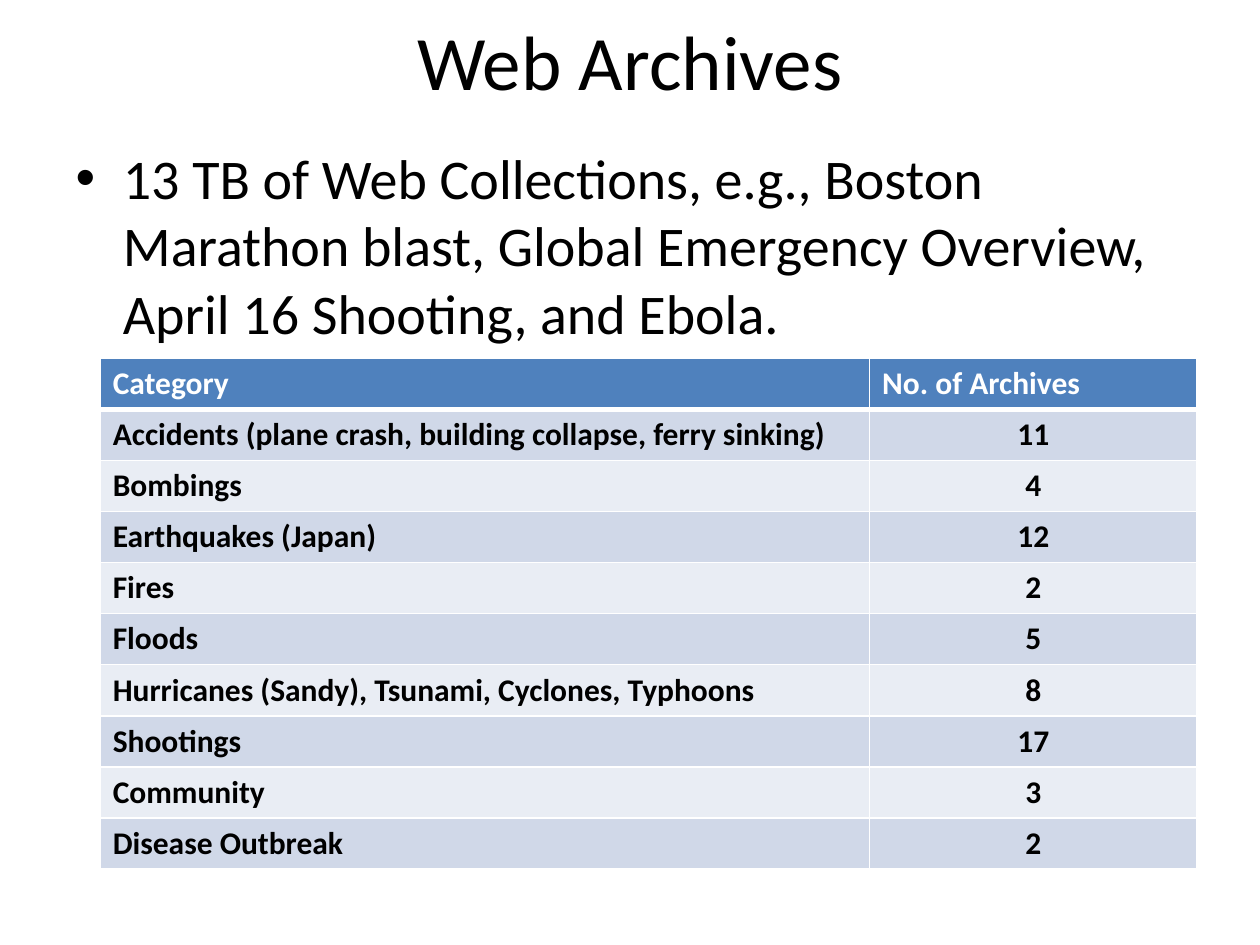
import pptx
import pptx.util
import pptx.dml.color
import pptx.enum.text
import pptx.oxml
import pptx.oxml.ns
from pptx.util import Cm

TITLE = "Web Archives"
BULLET = (
    "13 TB of Web Collections, e.g., Boston Marathon blast, "
    "Global Emergency Overview, April 16 Shooting, and Ebola."
)
HEADER = ("Category", "No. of Archives")
ARCHIVES = [
    ("Accidents (plane crash, building collapse, ferry sinking)", 11),
    ("Bombings", 4),
    ("Earthquakes (Japan)", 12),
    ("Fires", 2),
    ("Floods", 5),
    ("Hurricanes (Sandy), Tsunami, Cyclones, Typhoons", 8),
    ("Shootings", 17),
    ("Community", 3),
    ("Disease Outbreak", 2),
]
COLORS = {
    "text": "000000",
    "white": "FFFFFF",
    "header": "4F81BD",
    "odd": "D0D8E8",
    "even": "E9EDF4",
}
COLUMN_WIDTHS = (Cm(15.51), Cm(6.6))
ROW_HEIGHT = Cm(1.03)
ALIGN = pptx.enum.text.PP_ALIGN
ANCHOR = pptx.enum.text.MSO_ANCHOR


def color(name):
    return pptx.dml.color.RGBColor.from_string(COLORS[name])


def write_text(frame, text, size, fill="text", bold=False, align=ALIGN.LEFT):
    paragraph = frame.paragraphs[0]
    paragraph.alignment = align
    run = paragraph.add_run()
    run.text = text
    run.font.name = "Calibri"
    run.font.size = pptx.util.Pt(size)
    run.font.bold = bold
    run.font.color.rgb = color(fill)


def place(shape, left, top, width, height, anchor):
    shape.left, shape.top, shape.width, shape.height = left, top, width, height
    frame = shape.text_frame
    frame.word_wrap = True
    frame.auto_size = pptx.enum.text.MSO_AUTO_SIZE.NONE
    frame.vertical_anchor = anchor
    return frame


def set_borders(cell, bottom, top):
    properties = cell._tc.get_or_add_tcPr()
    widths = {"lnL": 1, "lnR": 1, "lnT": top, "lnB": bottom}
    for position, (side, width) in enumerate(widths.items()):
        border = pptx.oxml.parse_xml(
            f'<a:{side} {pptx.oxml.ns.nsdecls("a")} w="{pptx.util.Pt(width)}">'
            f'<a:solidFill><a:srgbClr val="{COLORS["white"]}"/></a:solidFill></a:{side}>'
        )
        properties.insert(position, border)


def fill_cell(cell, row, column, value):
    is_header = row == 0
    cell.fill.solid()
    cell.fill.fore_color.rgb = color("header" if is_header else "odd" if row % 2 else "even")
    write_text(
        cell.text_frame,
        str(value),
        18,
        fill="white" if is_header else "text",
        bold=True,
        align=ALIGN.CENTER if column and not is_header else ALIGN.LEFT,
    )
    set_borders(cell, bottom=3 if is_header else 1, top=3 if row == 1 else 1)


def add_archive_table(slide):
    rows = [HEADER, *ARCHIVES]
    table = slide.shapes.add_table(
        len(rows), len(HEADER), Cm(2.02), Cm(7.22),
        sum(COLUMN_WIDTHS), ROW_HEIGHT * len(rows),
    ).table
    for column, width in zip(table.columns, COLUMN_WIDTHS):
        column.width = width
    for row, values in enumerate(rows):
        table.rows[row].height = ROW_HEIGHT
        for column, value in enumerate(values):
            fill_cell(table.cell(row, column), row, column, value)


def main():
    presentation = pptx.Presentation()
    presentation.slide_width, presentation.slide_height = Cm(25.4), Cm(19.05)
    slide = presentation.slides.add_slide(presentation.slide_layouts[1])
    title, body = slide.placeholders
    title_frame = place(title, Cm(1.27), Cm(0.1), Cm(22.86), Cm(2.21), ANCHOR.MIDDLE)
    write_text(title_frame, TITLE, 44, align=ALIGN.CENTER)
    body_frame = place(body, Cm(1.27), Cm(2.77), Cm(22.86), Cm(12.57), ANCHOR.TOP)
    write_text(body_frame, BULLET, 32)
    add_archive_table(slide)
    presentation.save("out.pptx")


if __name__ == "__main__":
    main()
